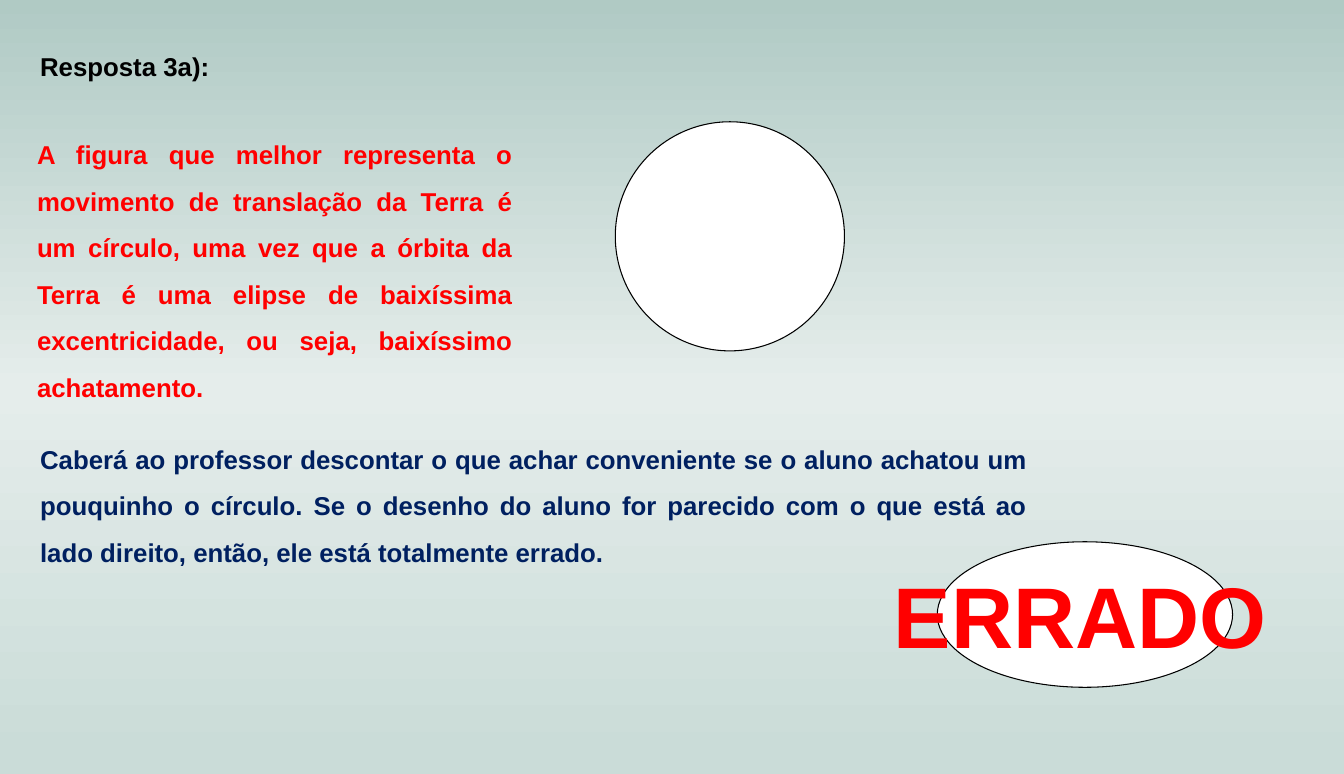
from copy import deepcopy

from pptx import Presentation
from pptx.dml.color import RGBColor
from pptx.enum.shapes import MSO_SHAPE
from pptx.enum.text import MSO_AUTO_SIZE, PP_ALIGN
from pptx.oxml.ns import qn
from pptx.util import Inches, Pt

ELLIPSE = MSO_SHAPE.OVAL
LEFT, JUSTIFY = PP_ALIGN.LEFT, PP_ALIGN.JUSTIFY
GROW = MSO_AUTO_SIZE.SHAPE_TO_FIT_TEXT

prs = Presentation()
prs.slide_width, prs.slide_height = Inches(13.02), Inches(7.5)
slide = prs.slides.add_slide(prs.slide_layouts[6])


def rgb(color):
    return RGBColor.from_string(color)


def box(x, y, w, h):
    """Turn percentages of the slide's width and height into lengths."""
    sides = (prs.slide_width, prs.slide_height) * 2
    return [round(side * share / 100) for side, share in zip(sides, (x, y, w, h))]


# Background: vertical gradient, lightest in the middle
fill = slide.background.fill
fill.gradient()
fill.gradient_angle = 270
stops = slide.element.find(".//" + qn("a:gsLst"))
stops.insert(1, deepcopy(stops[0]))
for stop, (position, color) in zip(
    fill.gradient_stops, [(0, "B0CAC4"), (0.5, "E5EDEB"), (0.98, "CADCD8")]
):
    stop.position = position
    stop.color.rgb = rgb(color)

# The right orbit (circle) and the wrong one (flattened ellipse)
for area in [(45.78, 15.73, 17.05, 29.6), (69.74, 70, 21.97, 18.8)]:
    sp = slide.shapes.add_shape(ELLIPSE, *box(*area))
    sp.shadow.inherit = False
    sp.fill.solid()
    sp.fill.fore_color.rgb = rgb("FFFFFF")
    sp.line.color.rgb = rgb("000000")
    sp.line.width = Pt(0.75)

# Area, text, size, colour, alignment, line spacing, wrap
texts = [
    ((2.23, 5.87, 14.82, 5.33), "Resposta 3a):", 18, "000000", LEFT, 1, False),
    ((2, 15.33, 36.87, 36.93),
     "A figura que melhor representa o movimento de translação da Terra é um "
     "círculo, uma vez que a órbita da Terra é uma elipse de baixíssima "
     "excentricidade, ou seja, baixíssimo achatamento.",
     18, "FF0000", JUSTIFY, 1.5, True),
    ((2.23, 54.67, 74.96, 18.8),
     "Caberá ao professor descontar o que achar conveniente se o aluno achatou um "
     "pouquinho o círculo. Se o desenho do aluno for parecido com o que está ao "
     "lado direito, então, ele está totalmente errado.",
     18, "002060", JUSTIFY, 1.5, True),
    ((65.75, 72, 33.18, 14.8), "ERRADO", 60, "FF0000", LEFT, 1, True),
]
for area, text, size, color, align, spacing, wrap in texts:
    tf = slide.shapes.add_textbox(*box(*area)).text_frame
    tf.word_wrap = wrap
    tf.auto_size = GROW
    p = tf.paragraphs[0]
    p.text = text
    p.alignment = align
    p.line_spacing = spacing
    p.font.name = "Arial"
    p.font.size = Pt(size)
    p.font.bold = True
    p.font.color.rgb = rgb(color)

prs.save("out.pptx")
